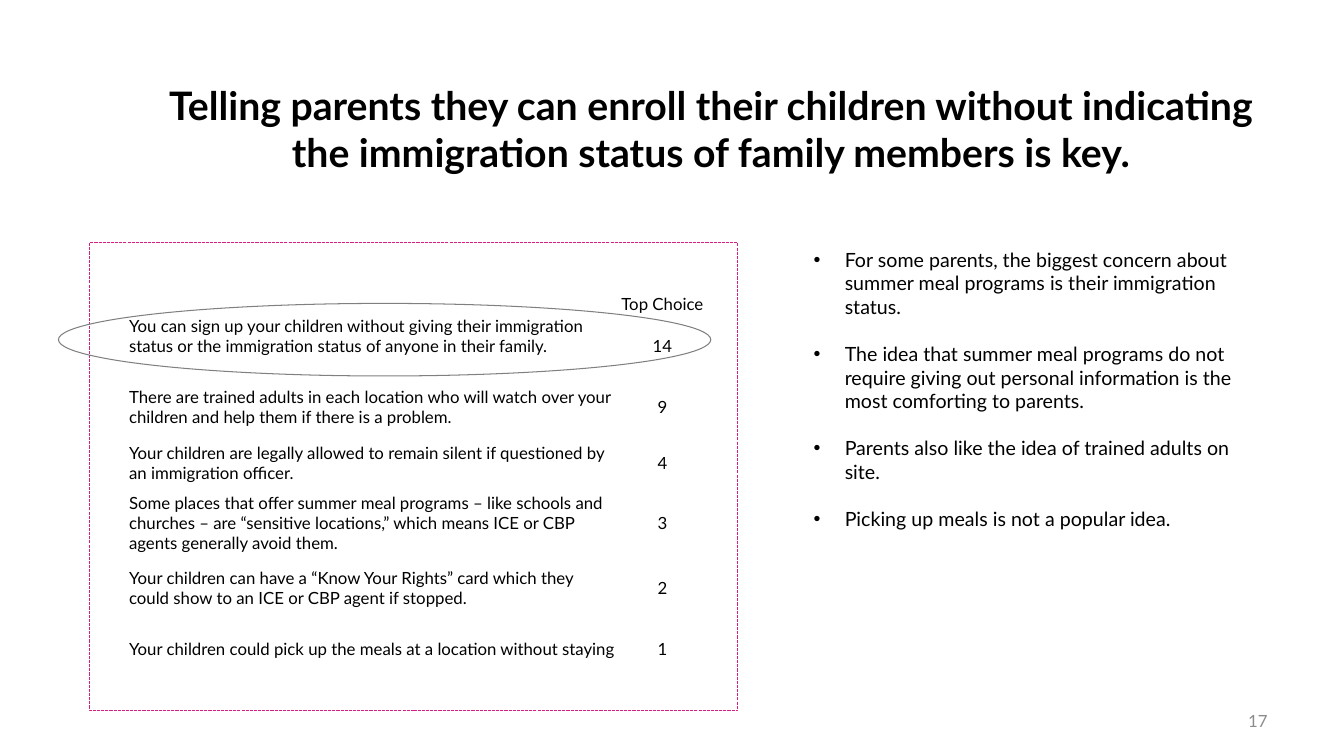
from pptx import Presentation
from pptx.util import Inches, Pt
from pptx.dml.color import RGBColor
from pptx.enum.dml import MSO_LINE
from pptx.enum.shapes import MSO_SHAPE
from pptx.enum.text import MSO_ANCHOR, PP_ALIGN
from pptx.oxml.ns import qn
from lxml.etree import SubElement

BLACK = RGBColor(0x00, 0x00, 0x00)
WHITE = RGBColor(0xFF, 0xFF, 0xFF)
PINK = RGBColor(0xD5, 0x1F, 0x81)
GRAY = RGBColor(0x80, 0x80, 0x80)
PALE = RGBColor(0x8C, 0x8C, 0x8C)


def write(para, text, size, align=PP_ALIGN.LEFT, color=BLACK, bold=False):
    para.alignment = align
    run = para.add_run()
    run.text = text
    look = {"name": "Lato", "size": Pt(size), "bold": bold}
    for key, value in look.items():
        setattr(run.font, key, value)
    run.font.color.rgb = color


def outline(kind, box, color):
    shape = slide.shapes.add_shape(kind, *map(Inches, box))
    shape.shadow.inherit = False
    shape.fill.background()
    shape.line.color.rgb = color
    shape.line.width = Pt(0.75)
    return shape


deck = Presentation()
deck.slide_width, deck.slide_height = Inches(13.33), Inches(7.5)
slide = deck.slides.add_slide(deck.slide_layouts[6])

number = slide.shapes.add_textbox(Inches(9.56), Inches(6.95), Inches(3.11), Inches(0.4))
number.text_frame.word_wrap = True
number.text_frame.vertical_anchor = MSO_ANCHOR.MIDDLE
write(number.text_frame.paragraphs[0], "17", 12, PP_ALIGN.RIGHT, PALE)

frame = outline(MSO_SHAPE.RECTANGLE, (0.89, 2.41, 6.43, 4.64), PINK)
frame.line.dash_style = MSO_LINE.SQUARE_DOT

points = [
    "For some parents, the biggest concern about summer meal programs is their immigration status.",
    "The idea that summer meal programs do not require giving out personal information is the most comforting to parents.",
    "Parents also like the idea of trained adults on site.",
    "Picking up meals is not a popular idea.",
]
notes = slide.shapes.add_textbox(Inches(7.97), Inches(2.41), Inches(4.39), Inches(2.93))
notes.text_frame.word_wrap = True
for i, point in enumerate(points):
    para = notes.text_frame.add_paragraph() if i else notes.text_frame.paragraphs[0]
    props = para._p.get_or_add_pPr()
    props.set("marL", str(Inches(0.31)))
    props.set("indent", str(Inches(-0.31)))
    SubElement(props, qn("a:buFont"), typeface="Arial")
    SubElement(props, qn("a:buChar"), char="•")
    if i:
        para.space_before = Pt(16.8)
    write(para, point, 14)

rows = [
    (0.2, "", "Top Choice"),
    (0.61, "You can sign up your children without giving their immigration status or the immigration status of anyone in their family.", "14"),
    (0.61, "There are trained adults in each location who will watch over your children and help them if there is a problem.", "9"),
    (0.49, "Your children are legally allowed to remain silent if questioned by an immigration officer.", "4"),
    (0.7, "Some places that offer summer meal programs – like schools and churches – are “sensitive locations,” which means ICE or CBP agents generally avoid them.", "3"),
    (0.6, "Your children can have a “Know Your Rights” card which they could show to an ICE or CBP agent if stopped.", "2"),
    (0.6, "Your children could pick up the meals at a location without staying", "1"),
]
table = slide.shapes.add_table(
    len(rows), 2, Inches(1.27), Inches(2.91), Inches(5.74), Inches(3.81)).table
table.first_row = table.horz_banding = False
table._tbl.tblPr[0].text = "{2D5ABB26-0587-4C30-8999-92F81FD0307C}"
for col, width in zip(table.columns, (4.86, 0.88)):
    col.width = Inches(width)
pads = {"margin_left": 0.01, "margin_right": 0.01, "margin_top": 0.01, "margin_bottom": 0}
for r, (height, *texts) in enumerate(rows):
    table.rows[r].height = Inches(height)
    for c, text in enumerate(texts):
        cell = table.cell(r, c)
        for key, value in pads.items():
            setattr(cell, key, Inches(value))
        cell.vertical_anchor = MSO_ANCHOR.MIDDLE
        para = cell.text_frame.paragraphs[0]
        if text:
            write(para, text, 12, PP_ALIGN.CENTER if c else PP_ALIGN.LEFT)
        else:
            SubElement(para._p, qn("a:endParaRPr"), sz="1200")
        if c:
            cell.fill.solid()
            cell.fill.fore_color.rgb = WHITE
        else:
            cell.fill.background()
table.cell(1, 0).vertical_anchor = MSO_ANCHOR.TOP

title = slide.shapes.add_textbox(Inches(1.38), Inches(0.76), Inches(11.34), Inches(1.04))
title.text_frame.word_wrap = True
write(
    title.text_frame.paragraphs[0],
    "Telling parents they can enroll their children without indicating the immigration status of family members is key.",
    28, PP_ALIGN.CENTER, bold=True)

outline(MSO_SHAPE.OVAL, (0.58, 3.01, 6.47, 0.72), GRAY)

deck.save("out.pptx")
